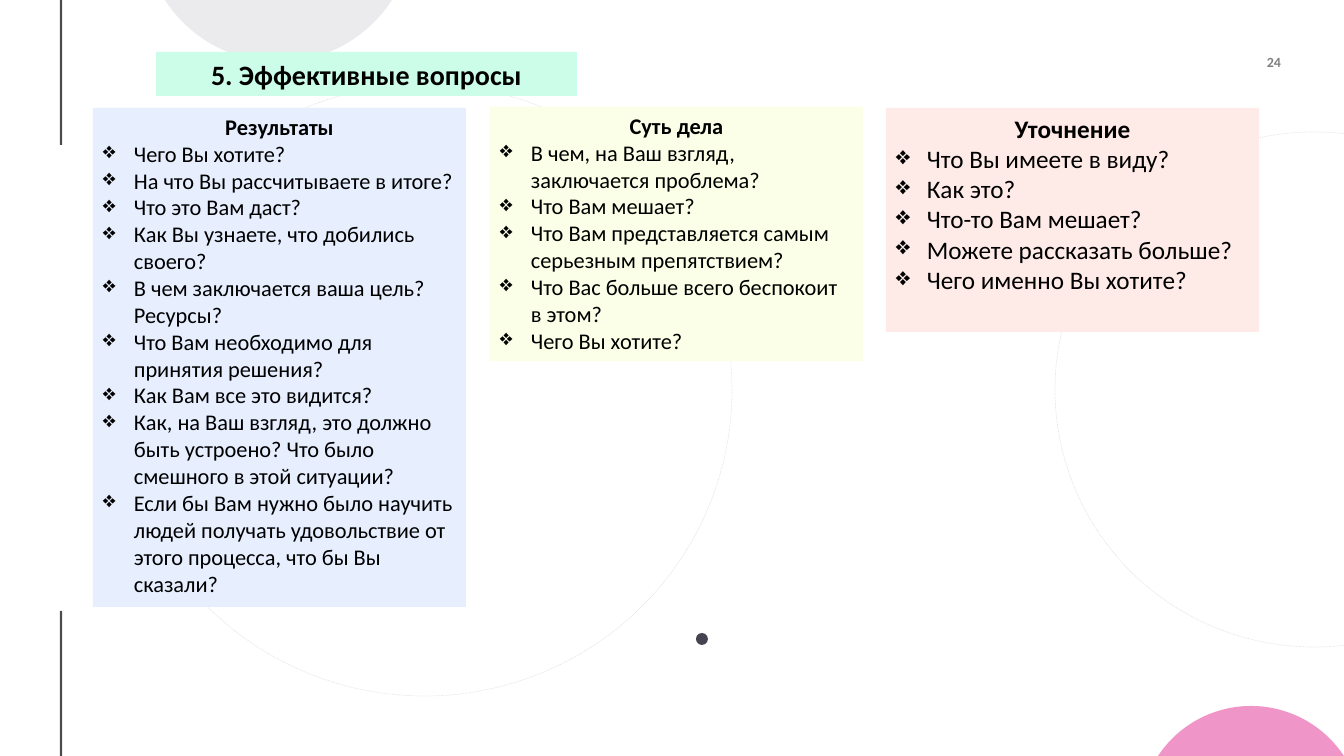
import math
from lxml import etree
from pptx import Presentation, util as u
from pptx.dml.color import RGBColor
from pptx.enum import dml, shapes, text
from pptx.oxml import ns

# Content
TITLE = "5. Эффективные вопросы"
PAGE = "24"
# heading, questions, box (left, top, width, height), fill, text size
CARDS = [
    ("Результаты", [
        "Чего Вы хотите?",
        "На что Вы рассчитываете в итоге?",
        "Что это Вам даст?",
        "Как Вы узнаете, что добились своего?",
        "В чем заключается ваша цель? Ресурсы?",
        "Что Вам необходимо для принятия решения?",
        "Как Вам все это видится?",
        "Как, на Ваш взгляд, это должно быть устроено? Что было смешного в этой ситуации?",
        "Если бы Вам нужно было научить людей получать удовольствие от этого процесса, "
        "что бы Вы сказали?",
    ], (93, 108, 373, 499), "blue", 16),
    ("Суть дела", [
        "В чем, на Ваш взгляд, заключается проблема?",
        "Что Вам мешает?",
        "Что Вам представляется самым серьезным препятствием?",
        "Что Вас больше всего беспокоит в этом?",
        "Чего Вы хотите?",
    ], (490, 107, 373, 254), "yellow", 16),
    ("Уточнение", [
        "Что Вы имеете в виду?",
        "Как это?",
        "Что-то Вам мешает?",
        "Можете рассказать больше?",
        "Чего именно Вы хотите?",
    ], (886, 108, 373, 224), "rose", 18),
]
RULES = [(611, 756), (0, 145)]
RINGS = [(1055, 132, 518, 515), (117, 84, 615, 612)]
# left, right, base line, tip, fill
CAPS = [(1158, 1344, 756, 706, "pink"), (165, 392, 0, 62, "grey")]

COLORS = {"black": "000000", "pink": "E32D91", "grey": "D8D9DC", "dot": "454551",
          "mint": "CBFDE8", "blue": "E7EFFF", "yellow": "FCFFE7", "rose": "FEEBE8"}
FONT = "Calibri"
SCALE = 914400 / 100.8
RULE_X = 61
INDENT = 31


def px(*values):
    return [round(v * SCALE) for v in values]


def paint(target, color, alpha=100):
    """Set a solid fill or font colour, optionally transparent."""
    target.solid()
    target.fore_color.rgb = RGBColor.from_string(COLORS[color])
    if alpha < 100:
        for clr in target._xPr.iter(ns.qn("a:srgbClr")):
            etree.SubElement(clr, ns.qn("a:alpha"), val=str(alpha * 1000))


def style(r, size, bold=True, alpha=100):
    r.font.name, r.font.size, r.font.bold = FONT, u.Pt(size), bold
    paint(r.font.fill, "black", alpha)


def add_shape(kind, box, fill=None):
    sp = s.shapes.add_shape(kind, *px(*box))
    sp.shadow.inherit = False
    if fill:
        paint(sp.fill, fill)
        sp.line.fill.background()
    else:
        sp.fill.background()
    return sp


def add_bullet(p):
    pPr = p._p.get_or_add_pPr()
    indent, = px(INDENT)
    pPr.set("marL", str(indent))
    pPr.set("indent", str(-indent))
    etree.SubElement(pPr, ns.qn("a:buChar"), char="❖")


def add_cap(left, right, base, tip, fill):
    """Circle segment standing on a slide edge."""
    half, rise = (right - left) / 2, abs(tip - base)
    radius = (half ** 2 + rise ** 2) / (2 * rise)
    sweep = math.asin(half / radius)
    side = 1 if tip > base else -1
    points = []
    for i in range(41):
        angle = sweep * (i / 20 - 1)
        points.append(px((left + right) / 2 + radius * math.sin(angle),
                         tip - side * radius * (1 - math.cos(angle))))
    builder = s.shapes.build_freeform(*points[0])
    builder.add_line_segments(points[1:], close=True)
    sp = builder.convert_to_shape()
    sp.shadow.inherit = False
    paint(sp.fill, fill, 50)
    sp.line.fill.background()


prs = Presentation()
prs.slide_width, prs.slide_height = px(1344, 756)
s = prs.slides.add_slide(prs.slide_layouts[5])

# Side rules
for top, bottom in RULES:
    line = s.shapes.add_connector(shapes.MSO_CONNECTOR.STRAIGHT,
                                  *px(RULE_X, top, RULE_X, bottom))
    line.line.width = u.Pt(1.5)
    paint(line.line.fill, "black", 70)
    etree.SubElement(line._element.spPr, ns.qn("a:effectLst"))

# Page number
tf = s.shapes.add_textbox(*px(1204, 48, 77, 27)).text_frame
tf.word_wrap = True
tf.vertical_anchor = text.MSO_ANCHOR.MIDDLE
tf.margin_left = tf.margin_right = tf.margin_top = tf.margin_bottom = 0
tf.text = PAGE
tf.paragraphs[0].alignment = text.PP_ALIGN.RIGHT
style(tf.paragraphs[0].runs[0], 10, alpha=50)

# Background circles
for box in RINGS:
    sp = add_shape(shapes.MSO_SHAPE.OVAL, box)
    sp.line.width = u.Pt(0.5)
    paint(sp.line.fill, "black", 10)
    sp.line.dash_style = dml.MSO_LINE.ROUND_DOT
add_shape(shapes.MSO_SHAPE.OVAL, (696, 633, 12, 12), "dot")
for cap in CAPS:
    add_cap(*cap)

# Title, brought in front of the circles
title = s.shapes.title
title.left, title.top, title.width, title.height = px(156, 52, 421, 44)
paint(title.fill, "mint")
tf = title.text_frame
tf.text = TITLE
tf.word_wrap = True
tf.auto_size = text.MSO_AUTO_SIZE.NONE
tf.vertical_anchor = text.MSO_ANCHOR.MIDDLE
tf.paragraphs[0].alignment = text.PP_ALIGN.CENTER
style(tf.paragraphs[0].runs[0], 20)
title.element.getparent().append(title.element)

# Question cards
for heading, questions, box, fill, size in CARDS:
    tf = add_shape(shapes.MSO_SHAPE.RECTANGLE, box, fill).text_frame
    tf.word_wrap = True
    tf.vertical_anchor = text.MSO_ANCHOR.TOP
    tf.text = "\n".join([heading, *questions])
    for i, p in enumerate(tf.paragraphs):
        p.alignment = text.PP_ALIGN.LEFT if i else text.PP_ALIGN.CENTER
        if i:
            add_bullet(p)
        style(p.runs[0], size, bold=i == 0)

prs.save("out.pptx")
